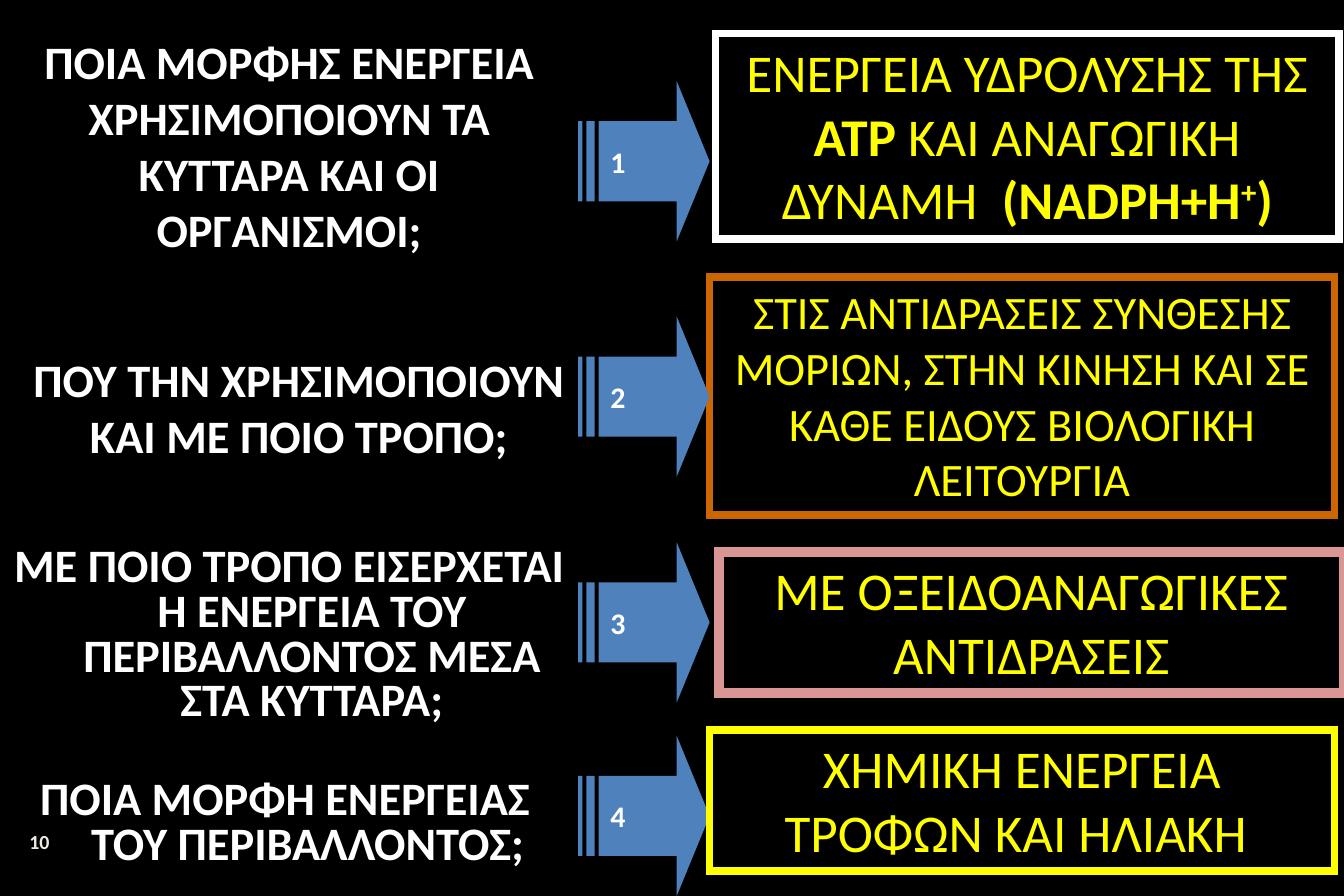
from lxml import etree
from pptx import Presentation
from pptx import util as u
from pptx.dml.color import RGBColor
from pptx.enum import shapes, text

BLACK = RGBColor(0x00, 0x00, 0x00)
WHITE = RGBColor(0xFF, 0xFF, 0xFF)
CREAM = RGBColor(0xEE, 0xEC, 0xE1)
YELLOW = RGBColor(0xFF, 0xFF, 0x00)
ORANGE = RGBColor(0xCC, 0x66, 0x00)
PINK = RGBColor(0xD9, 0x96, 0x94)
BLUE = RGBColor(0x4F, 0x81, 0xBD)

HANGING = 0.38
ARROW_BOX = {"left": 4.84, "width": 1.1, "height": 1.34}

ROWS = [
    {
        "question": "ΠΟΙΑ ΜΟΡΦΗΣ ΕΝΕΡΓΕΙΑ ΧΡΗΣΙΜΟΠΟΙΟΥΝ ΤΑ ΚΥΤΤΑΡΑ ΚΑΙ ΟΙ ΟΡΓΑΝΙΣΜΟΙ;",
        "question_box": (0, 0.23, 4.84, 1.99),
        "arrow_top": 0.68,
        "answer": [
            ("ΕΝΕΡΓΕΙΑ ΥΔΡΟΛΥΣΗΣ ΤΗΣ ", {}),
            ("ΑΤΡ", {"bold": True}),
            (" ΚΑΙ ΑΝΑΓΩΓΙΚΗ ΔΥΝΑΜΗ  ", {}),
            ("(NADPH+H", {"bold": True}),
            ("+", {"bold": True, "raised": True}),
            (")", {"bold": True}),
        ],
        "answer_box": (5.99, 0.28, 5.22, 1.72),
        "border": (WHITE, 4.5),
    },
    {
        "question": "ΠΟΥ ΤΗΝ ΧΡΗΣΙΜΟΠΟΙΟΥΝ ΚΑΙ ΜΕ ΠΟΙΟ ΤΡΟΠΟ;",
        "question_box": (0, 2.89, 5, 1.04),
        "arrow_top": 2.65,
        "arrow_in_front": True,
        "answer": [("ΣΤΙΣ ΑΝΤΙΔΡΑΣΕΙΣ ΣΥΝΘΕΣΗΣ ΜΟΡΙΩΝ, ΣΤΗΝ ΚΙΝΗΣΗ ΚΑΙ ΣΕ "
                    "ΚΑΘΕ ΕΙΔΟΥΣ ΒΙΟΛΟΓΙΚΗ ΛΕΙΤΟΥΡΓΙΑ", {})],
        "answer_box": (5.94, 2.32, 5.23, 1.99),
        "answer_size": 28,
        "border": (ORANGE, 4.5),
    },
    {
        "question": "ΜΕ ΠΟΙΟ ΤΡΟΠΟ ΕΙΣΕΡΧΕΤΑΙ Η ΕΝΕΡΓΕΙΑ ΤΟΥ ΠΕΡΙΒΑΛΛΟΝΤΟΣ ΜΕΣΑ ΣΤΑ ΚΥΤΤΑΡΑ;",
        "question_box": (0, 4.53, 4.84, 1.61),
        "hanging": True,
        "arrow_top": 4.54,
        "answer": [("ΜΕ ΟΞΕΙΔΟΑΝΑΓΩΓΙΚΕΣ ΑΝΤΙΔΡΑΣΕΙΣ", {})],
        "answer_box": (6.02, 4.62, 5.23, 1.18),
        "border": (PINK, 6),
    },
    {
        "question": "ΠΟΙΑ ΜΟΡΦΗ ΕΝΕΡΓΕΙΑΣ ΤΟΥ ΠΕΡΙΒΑΛΛΟΝΤΟΣ;",
        "question_box": (0, 6.48, 4.77, 0.86),
        "hanging": True,
        "arrow_top": 6.16,
        "answer": [("ΧΗΜΙΚΗ ΕΝΕΡΓΕΙΑ ΤΡΟΦΩΝ ΚΑΙ ΗΛΙΑΚΗ ", {})],
        "answer_box": (5.94, 6.11, 5.23, 1.18),
        "border": (YELLOW, 4.5),
    },
]


def inches(box):
    return [u.Inches(length) for length in box]


def write(para, wording, size=28, color=WHITE, bold=False, raised=False):
    span = para.add_run()
    span.text = wording
    span.font.name = "Calibri"
    span.font.size = u.Pt(size)
    span.font.bold = bold
    span.font.color.rgb = color
    if raised:
        span.font._element.set("baseline", "30000")


def first_paragraph(shape, align=text.PP_ALIGN.CENTER, anchor=text.MSO_ANCHOR.TOP, wrap=True):
    frame = shape.text_frame
    frame.word_wrap = wrap
    frame.vertical_anchor = anchor
    para = frame.paragraphs[0]
    para.alignment = align
    return para


def add_question(page, box, wording, hanging=False):
    para = first_paragraph(page.shapes.add_textbox(*inches(box)))
    if hanging:
        para.line_spacing = 0.8
        para.space_before = u.Pt(5.6)
        properties = para._p.get_or_add_pPr()
        properties.set("marL", str(u.Inches(HANGING)))
        properties.set("indent", str(-u.Inches(HANGING)))
    write(para, wording, bold=True)


def add_arrow(page, box, number):
    arrow = page.shapes.add_shape(shapes.MSO_SHAPE.STRIPED_RIGHT_ARROW, *inches(box))
    arrow.adjustments[0] = 0.5
    arrow.adjustments[1] = 0.25
    arrow.shadow.inherit = False
    arrow.fill.solid()
    arrow.fill.fore_color.rgb = BLUE
    arrow.line.fill.background()
    para = first_paragraph(arrow, align=text.PP_ALIGN.LEFT,
                           anchor=text.MSO_ANCHOR.MIDDLE, wrap=False)
    write(para, str(number), size=18, bold=True)


def add_answer(page, box, spans, border, size=32):
    frame = page.shapes.add_shape(shapes.MSO_SHAPE.RECTANGLE, *inches(box))
    frame.shadow.inherit = False
    frame.fill.background()
    frame.line.color.rgb, width = border
    frame.line.width = u.Pt(width)
    etree.SubElement(frame.line._get_or_add_ln(),
                     "{http://schemas.openxmlformats.org/drawingml/2006/main}miter", lim="800000")
    para = first_paragraph(frame)
    for wording, style in spans:
        write(para, wording, size=size, color=YELLOW, **style)


def add_row(page, number, row):
    arrow_box = (ARROW_BOX["left"], row["arrow_top"], ARROW_BOX["width"], ARROW_BOX["height"])
    in_front = row.get("arrow_in_front", False)
    add_question(page, row["question_box"], row["question"], row.get("hanging", False))
    if not in_front:
        add_arrow(page, arrow_box, number)
    add_answer(page, row["answer_box"], row["answer"], row["border"], row.get("answer_size", 32))
    if in_front:
        add_arrow(page, arrow_box, number)


def add_page_number(page, box, number):
    para = first_paragraph(page.shapes.add_textbox(*inches(box)), anchor=text.MSO_ANCHOR.MIDDLE)
    write(para, str(number), size=12, color=CREAM, bold=True)


def main():
    deck = Presentation()
    deck.slide_width, deck.slide_height = inches((11.25, 7.5))
    page = deck.slides.add_slide(deck.slide_layouts[6])
    page.background.fill.solid()
    page.background.fill.fore_color.rgb = BLACK
    add_page_number(page, (0, 6.83, 0.66, 0.42), 10)
    for number, row in enumerate(ROWS, start=1):
        add_row(page, number, row)
    deck.save("out.pptx")


if __name__ == "__main__":
    main()
